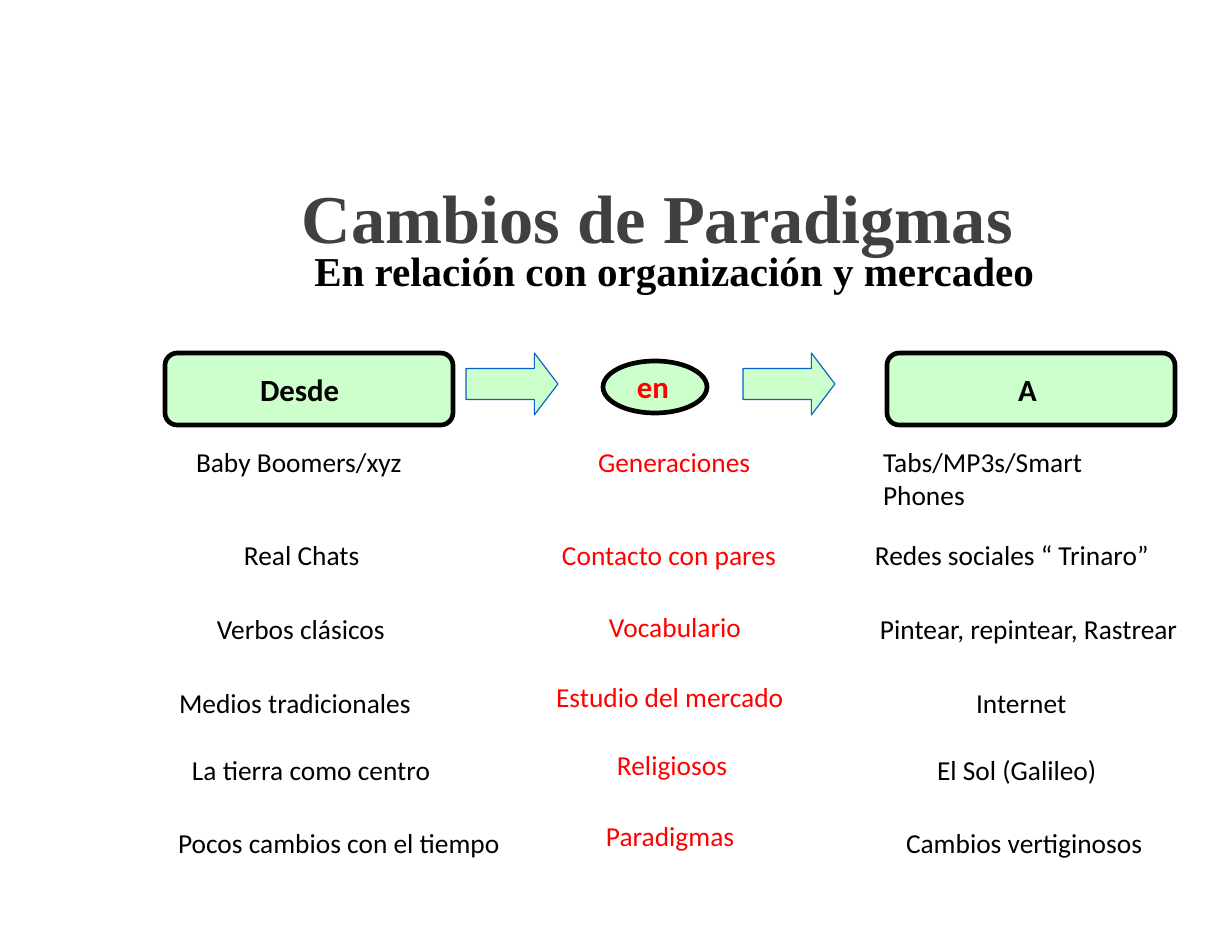
import typing

import pptx
import pptx.dml.color
import pptx.enum.shapes
import pptx.enum.text
import pptx.util

KIND = pptx.enum.shapes.MSO_SHAPE
ALIGN = pptx.enum.text.PP_ALIGN
FIT = pptx.enum.text.MSO_AUTO_SIZE

SCALE = 914400 / 112
COLORS = {
    "ink": "000000",
    "red": "FF0000",
    "title": "404040",
    "mint": "CCFFCC",
    "blue": "0563C1",
}


class Box(typing.NamedTuple):
    x: int
    y: int
    w: int
    h: int


class Cell(typing.NamedTuple):
    x: int
    w: int
    text: str


class Column(typing.NamedTuple):
    color: str
    tops: list[int]
    cells: list[Cell]


class Form(typing.NamedTuple):
    kind: typing.Any
    box: Box
    line: str
    width: float
    adjust: list[float]


SIDE_TOPS = [440, 533, 607, 681, 748, 821]
MID_TOPS = [440, 533, 605, 675, 743, 814]

COLUMNS = [
    Column("red", MID_TOPS, [
        Cell(587, 176, "Generaciones"),
        Cell(551, 239, "Contacto con pares"),
        Cell(598, 156, "Vocabulario"),
        Cell(545, 252, "Estudio del mercado"),
        Cell(606, 133, "Religiosos"),
        Cell(595, 151, "Paradigmas"),
    ]),
    Column("ink", SIDE_TOPS, [
        Cell(185, 230, "Baby Boomers/xyz"),
        Cell(233, 139, "Real Chats"),
        Cell(206, 204, "Verbos clásicos"),
        Cell(168, 255, "Medios tradicionales"),
        Cell(181, 262, "La tierra como centro"),
        Cell(167, 347, "Pocos cambios con el tiempo"),
    ]),
    Column("ink", SIDE_TOPS, [
        Cell(872, 296, "Tabs/MP3s/Smart Phones"),
        Cell(864, 300, "Redes sociales “ Trinaro”"),
        Cell(869, 330, "Pintear, repintear, Rastrear"),
        Cell(965, 113, "Internet"),
        Cell(926, 184, "El Sol (Galileo)"),
        Cell(895, 261, "Cambios vertiginosos"),
    ]),
]

FORMS = [
    *(Form(KIND.ROUNDED_RECTANGLE, Box(x, 353, 288, 72), "ink", 3, [0.17])
      for x in (165, 887)),
    Form(KIND.OVAL, Box(603, 361, 104, 52), "ink", 3, []),
    *(Form(KIND.RIGHT_ARROW, Box(x, 353, 92, 62), "blue", 0.75, [0.5, 0.38])
      for x in (466, 743)),
]


def px(n: int) -> int:
    return round(n * SCALE)


def rgb(name: str) -> pptx.dml.color.RGBColor:
    return pptx.dml.color.RGBColor.from_string(COLORS[name])


def write(slide, text: str, box: Box, *, size: float = 17.6,
          color: str = "ink", face: str = "Calibri", bold: bool = False,
          wrap: bool = False, align=ALIGN.LEFT) -> None:
    frame = slide.shapes.add_textbox(*map(px, box)).text_frame
    frame.word_wrap = wrap
    frame.auto_size = FIT.SHAPE_TO_FIT_TEXT
    line = frame.paragraphs[0]
    line.alignment = align
    run = line.add_run()
    run.text = text
    run.font.size = pptx.util.Pt(size)
    run.font.name = face
    run.font.bold = bold
    run.font.color.rgb = rgb(color)


def draw(slide, form: Form) -> None:
    shape = slide.shapes.add_shape(form.kind, *map(px, form.box))
    shape.shadow.inherit = False
    shape.fill.solid()
    shape.fill.fore_color.rgb = rgb("mint")
    shape.line.color.rgb = rgb(form.line)
    shape.line.width = pptx.util.Pt(form.width)
    for i, value in enumerate(form.adjust):
        shape.adjustments[i] = value


def fill(slide, column: Column) -> None:
    for top, cell in zip(column.tops, column.cells):
        write(slide, cell.text, Box(cell.x, top, cell.w, 45),
              color=column.color)


def main() -> None:
    deck = pptx.Presentation()
    deck.slide_width, deck.slide_height = px(1232), px(952)
    slide = deck.slides.add_slide(deck.slide_layouts[6])

    for column in COLUMNS:
        fill(slide, column)
    for form in FORMS:
        draw(slide, form)

    write(slide, "Desde", Box(249, 365, 110, 48), size=19.8, bold=True)
    write(slide, "en", Box(626, 362, 82, 48), size=19.8, bold=True,
          color="red", wrap=True)
    write(slide, "A", Box(1007, 365, 48, 48), size=19.8, bold=True)

    serif = "Times New Roman"
    write(slide, "En relación con organización y mercadeo",
          Box(288, 240, 773, 62), size=26.4, face=serif, bold=True,
          wrap=True, align=ALIGN.CENTER)
    write(slide, "Cambios de Paradigmas", Box(291, 170, 740, 94),
          size=44, face=serif, bold=True, color="title")

    deck.save("out.pptx")


if __name__ == "__main__":
    main()
